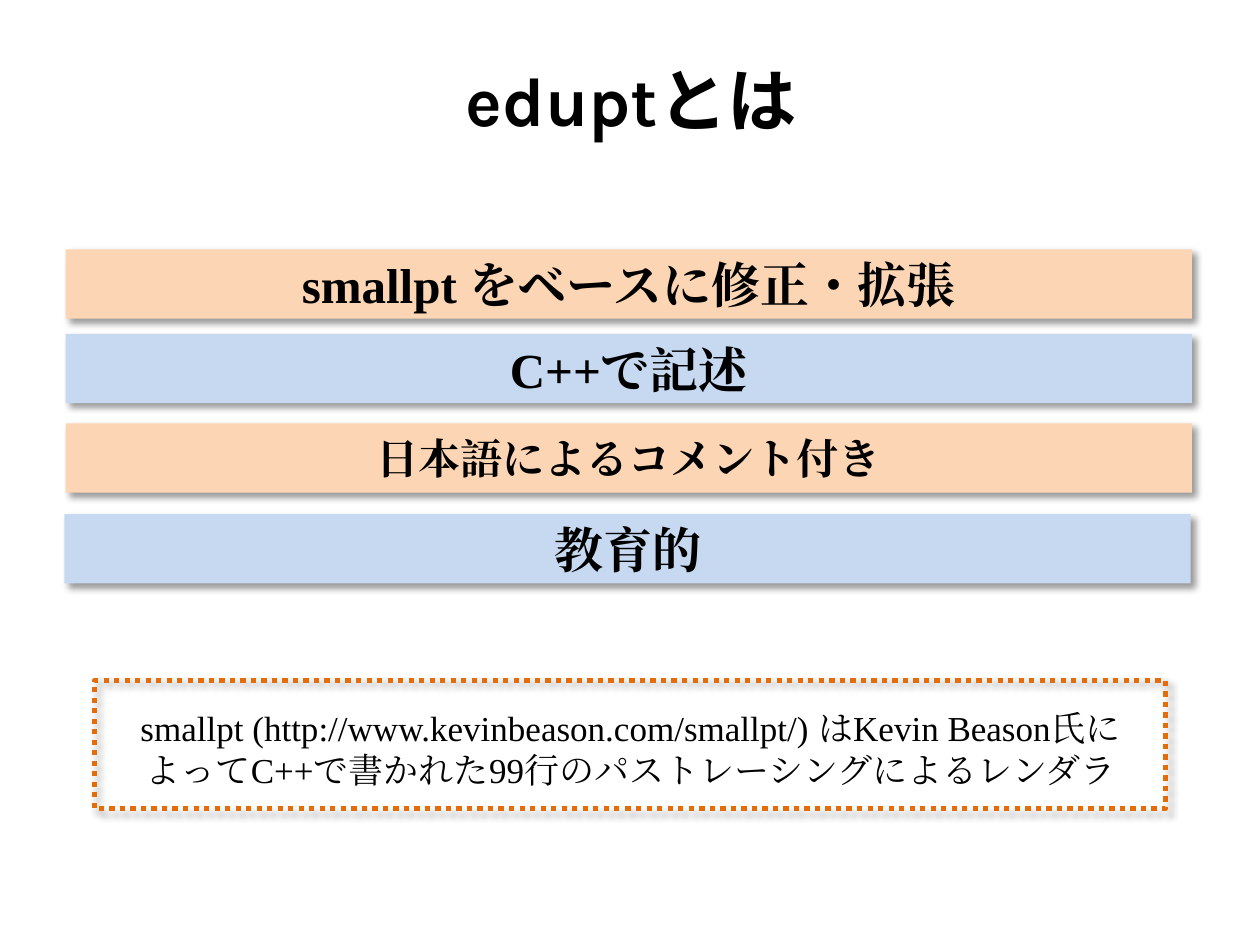
import pptx
import pptx.util
import pptx.dml.color
import pptx.enum.dml
import pptx.enum.shapes
import pptx.enum.text
import pptx.oxml
import pptx.oxml.ns
import lxml.etree
from pptx.util import Pt

THEME = {
    "text": "000000", "orange": "FCD5B5", "blue": "C6D9F1", "border": "E46C0A",
    "title_font": "Karla", "body_font": "Times New Roman",
    "title_size": 39.6, "bar_size": 28, "small_bar_size": 24, "note_size": 20,
}

TITLE = "eduptとは"
# text, size name, left, top
BARS = [
    ("smallpt をベースに修正・拡張", "bar_size", 37.5, 142.5),
    ("C++で記述", "bar_size", 37.5, 190.8),
    ("日本語によるコメント付き", "small_bar_size", 37.5, 241.9),
    ("教育的", "bar_size", 36.8, 293.8),
]
BAR_WIDTH, BAR_HEIGHT = 643.7, 39.6
NOTE = ("smallpt (http://www.kevinbeason.com/smallpt/) はKevin Beason氏によって"
        "C++で書かれた99行のパストレーシングによるレンダラ")


def colour(name):
    return pptx.dml.color.RGBColor.from_string(THEME[name])


def write(shape, text, font_name, size_name, bold, anchor):
    frame = shape.text_frame
    frame.word_wrap = True
    frame.vertical_anchor = anchor
    para = frame.paragraphs[0]
    para.alignment = pptx.enum.text.PP_ALIGN.CENTER
    span = para.add_run()
    span.text = text
    span.font.size = Pt(THEME[size_name])
    span.font.bold = bold
    span.font.color.rgb = colour("text")
    span.font.name = THEME[font_name]
    # The East Asian typeface follows the Latin one.
    east_asian = lxml.etree.SubElement(span.font._element, pptx.oxml.ns.qn("a:ea"))
    east_asian.set("typeface", THEME[font_name])


def add_text(slide, left, top, width, height, *style):
    box = slide.shapes.add_textbox(Pt(left), Pt(top), Pt(width), Pt(height))
    write(box, *style)


def add_shadowed_box(slide, left, top, width, height):
    """Add a borderless rectangle with a soft shadow to the lower right."""
    box = slide.shapes.add_shape(pptx.enum.shapes.MSO_SHAPE.RECTANGLE,
                                 Pt(left), Pt(top), Pt(width), Pt(height))
    box.fill.background()
    box.line.fill.background()
    box.shadow.inherit = False
    effects = box._element.spPr.find(pptx.oxml.ns.qn("a:effectLst"))
    effects.append(pptx.oxml.parse_xml(
        f'<a:outerShdw {pptx.oxml.ns.nsdecls("a")} blurRad="{Pt(4)}" dist="{Pt(3)}" '
        'dir="2700000" algn="tl" rotWithShape="0">'
        f'<a:srgbClr val="{THEME["text"]}"><a:alpha val="40000"/></a:srgbClr>'
        '</a:outerShdw>'))
    return box


def main():
    deck = pptx.Presentation()
    deck.slide_width, deck.slide_height = Pt(720), Pt(540)
    slide = deck.slides.add_slide(deck.slide_layouts[6])
    anchors = pptx.enum.text.MSO_ANCHOR

    add_text(slide, 36.7, 31.7, 648, 49,
             TITLE, "title_font", "title_size", True, anchors.MIDDLE)

    frame = add_shadowed_box(slide, 54, 388.8, 612, 73.4)
    frame.line.color.rgb = colour("border")
    frame.line.width = Pt(3)
    frame.line.dash_style = pptx.enum.dml.MSO_LINE.ROUND_DOT
    add_text(slide, 59.8, 400.3, 601.2, 55.4,
             NOTE, "body_font", "note_size", False, anchors.TOP)

    for index, (text, size_name, left, top) in enumerate(BARS):
        bar = add_shadowed_box(slide, left, top, BAR_WIDTH, BAR_HEIGHT)
        bar.fill.solid()
        bar.fill.fore_color.rgb = colour(("orange", "blue")[index % 2])
        write(bar, text, "body_font", size_name, True, anchors.MIDDLE)

    deck.save("out.pptx")


if __name__ == "__main__":
    main()
